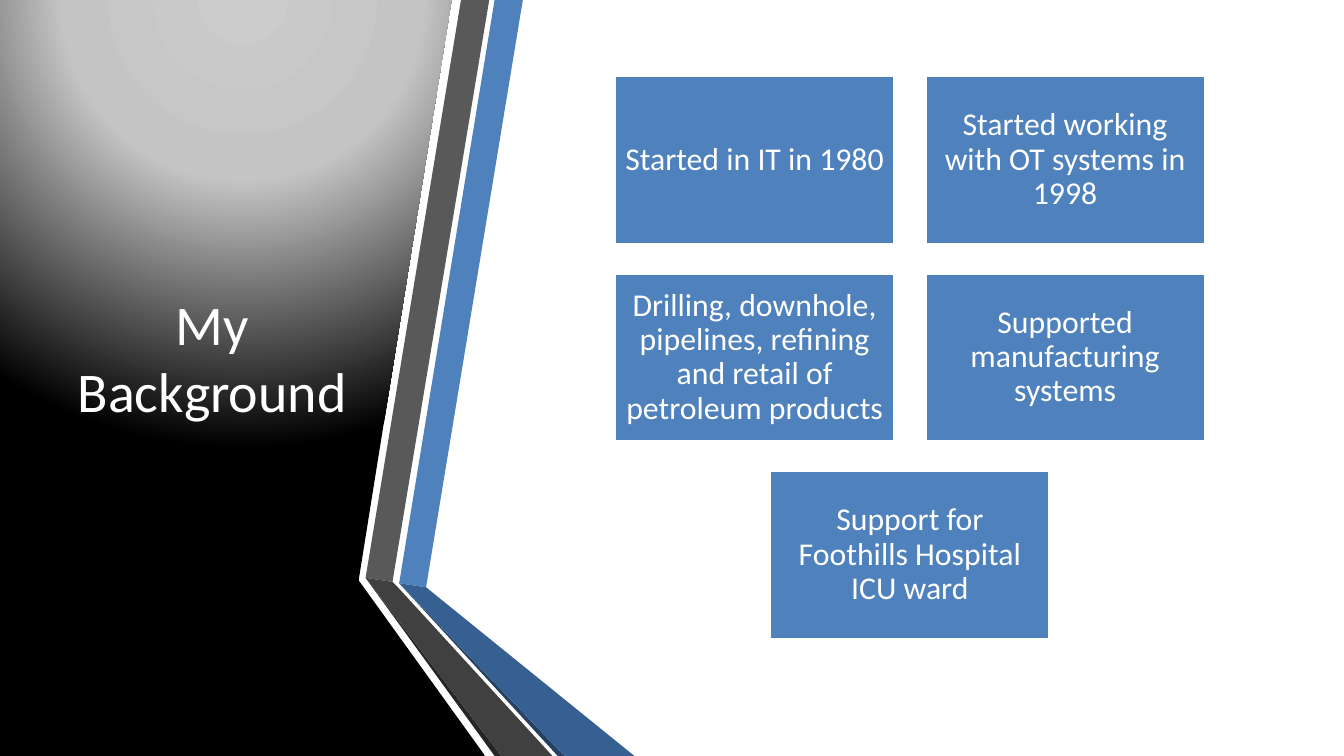
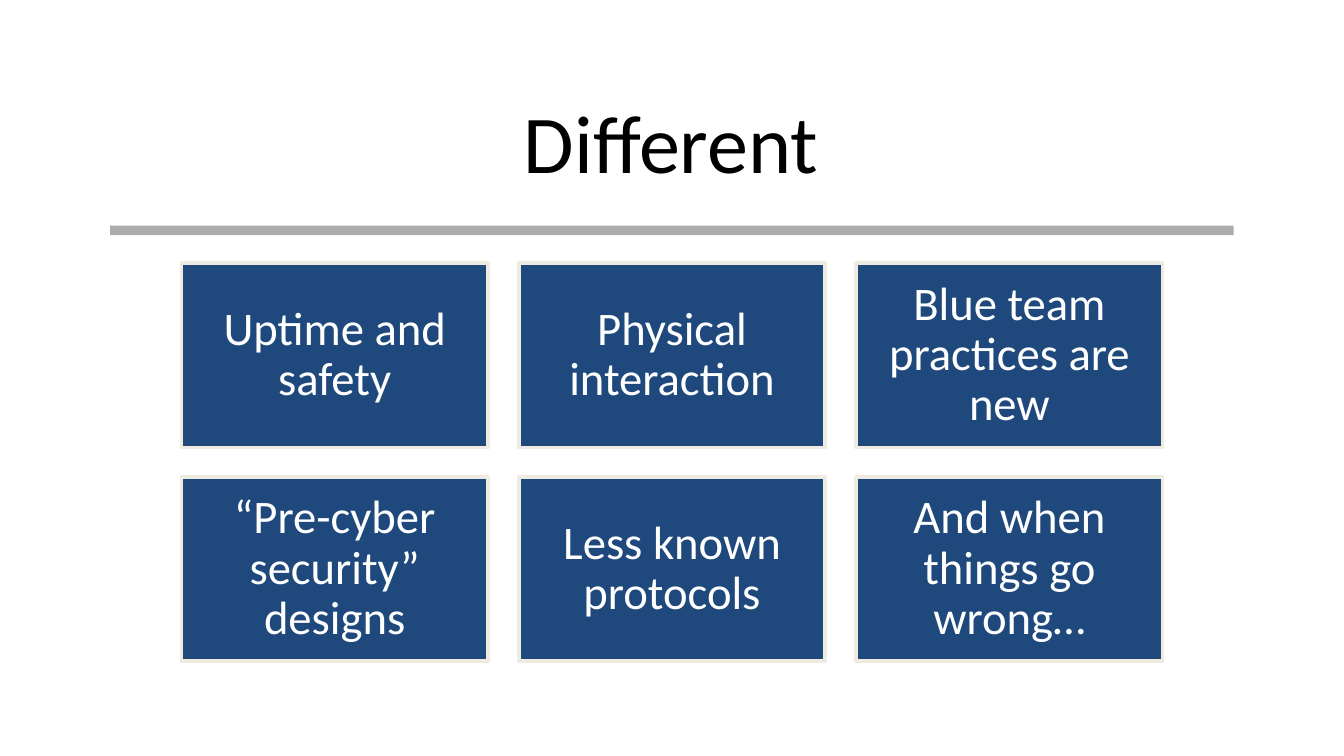
from lxml import etree
from pptx import Presentation
from pptx.dml.color import RGBColor
from pptx.enum import shapes, text
from pptx.oxml import parse_xml
from pptx.oxml.ns import nsdecls, qn
from pptx.util import Inches, Pt

WIDTH = 10
HEIGHT = WIDTH * 9 / 16
FONT = "Calibri"

WHITE = RGBColor(0xFF, 0xFF, 0xFF)
BLACK = RGBColor(0x00, 0x00, 0x00)
GRAY = RGBColor(0x80, 0x80, 0x80)
CREAM = RGBColor(0xEE, 0xEC, 0xE1)
NAVY = RGBColor(0x1F, 0x49, 0x7D)
BLUE = RGBColor(0x4F, 0x81, 0xBD)
BLUE_DARK = RGBColor(0x37, 0x60, 0x92)
BLUE_DEEP = RGBColor(0x25, 0x40, 0x61)
GRAY_MID = RGBColor(0x59, 0x59, 0x59)
GRAY_DARK = RGBColor(0x40, 0x40, 0x40)
GRAY_DEEP = RGBColor(0x26, 0x26, 0x26)

# Outline and colour of each ribbon strip, back to front
RIBBONS = [
    (BLUE, [(2.97, 4.34), (3.17, 4.37), (3.89, 0), (3.68, 0)]),
    (GRAY_MID, [(3.64, 0), (3.43, 0), (2.72, 4.3), (2.92, 4.33)]),
    (GRAY_DEEP, [(2.72, 4.3), (3.68, HEIGHT), (3.73, HEIGHT)]),
    (BLUE_DEEP, [(2.97, 4.34), (4.15, HEIGHT), (4.2, HEIGHT)]),
    (BLUE_DARK, [(2.97, 4.34), (4.2, HEIGHT), (4.72, HEIGHT), (3.17, 4.37)]),
    (GRAY_DARK, [(4.11, HEIGHT), (2.96, 4.37), (2.92, 4.33), (2.72, 4.3),
                 (3.73, HEIGHT)]),
]
PANEL = [(2.64, 0), (3.36, 0), (2.67, 4.31), (2.67, 4.32), (3.61, HEIGHT),
         (0, HEIGHT), (0, 0)]
PANEL_GRADIENT = f"""
<a:gradFill {nsdecls("a")} rotWithShape="1">
  <a:gsLst>
    <a:gs pos="0"><a:srgbClr val="CCCCCC"/></a:gs>
    <a:gs pos="40000"><a:srgbClr val="C4C4C4"/></a:gs>
    <a:gs pos="100000"><a:srgbClr val="000000"/></a:gs>
  </a:gsLst>
  <a:path path="circle">
    <a:fillToRect l="50000" t="-80000" r="50000" b="180000"/>
  </a:path>
</a:gradFill>"""

BACKGROUND = [
    ["Started in IT in 1980", "Started working with OT systems in 1998"],
    ["Drilling, downhole, pipelines, refining and retail of petroleum products",
     "Supported manufacturing systems"],
    ["Support for Foothills Hospital ICU ward"],
]
DIFFERENCES = [
    ["Uptime and safety", "Physical interaction", "Blue team practices are new"],
    ["“Pre-cyber security” designs", "Less known protocols",
     "And when things go wrong…"],
]


def add_slide(prs):
    s = prs.slides.add_slide(prs.slide_layouts[6])
    s.background.fill.solid()
    s.background.fill.fore_color.rgb = WHITE
    return s


def write(sp, words, size, color):
    """Put one centred paragraph in the middle of a shape."""
    tf = sp.text_frame
    tf.word_wrap = True
    tf.vertical_anchor = text.MSO_ANCHOR.MIDDLE
    p = tf.paragraphs[0]
    p.text = words
    p.alignment = text.PP_ALIGN.CENTER
    p.font.name = FONT
    p.font.size = Pt(size)
    p.font.color.rgb = color
    return p


def add_title(s, words, box, size, color):
    write(s.shapes.add_textbox(*map(Inches, box)), words, size, color)


def add_rect(s, box, fill):
    sp = s.shapes.add_shape(shapes.MSO_SHAPE.RECTANGLE, *map(Inches, box))
    sp.shadow.inherit = False
    sp.fill.solid()
    sp.fill.fore_color.rgb = fill
    sp.line.fill.background()
    return sp


def add_outline(s, points, fill):
    """Draw a closed polygon without a border from points in inches."""
    start, *rest = [(Inches(x), Inches(y)) for x, y in points]
    builder = s.shapes.build_freeform(*start)
    builder.add_line_segments(rest, close=True)
    sp = builder.convert_to_shape()
    sp.shadow.inherit = False
    sp.fill.solid()
    sp.fill.fore_color.rgb = fill
    sp.line.fill.background()
    return sp


def add_panel(s):
    sp = add_outline(s, PANEL, BLACK)
    solid = sp._element.spPr.find(qn("a:solidFill"))
    solid.getparent().replace(solid, parse_xml(PANEL_GRADIENT))


def add_rule(s):
    sp = add_rect(s, (0.82, 1.68, 8.36, 0.07), GRAY)
    color = sp._element.spPr.find(qn("a:solidFill"))[0]
    etree.SubElement(color, qn("a:alpha")).set("val", "65000")


def add_cards(s, rows, origin, card, gap, size, inset, fill, border):
    """Lay out rows of cards; a shorter row is centred under the first."""
    (left, top), (w, h), (gap_x, gap_y) = origin, card, gap
    for i, row in enumerate(rows):
        indent = (len(rows[0]) - len(row)) * (w + gap_x) / 2
        for j, words in enumerate(row):
            x = left + indent + j * (w + gap_x)
            sp = add_rect(s, (x, top + i * (h + gap_y), w, h), fill)
            sp.line.color.rgb = border
            sp.line.width = Pt(2)
            tf = sp.text_frame
            tf.margin_left = tf.margin_right = Inches(inset)
            tf.margin_top = tf.margin_bottom = Inches(inset)
            p = write(sp, words, size, WHITE)
            p.line_spacing = 0.9


def build_background(prs):
    s = add_slide(prs)
    add_panel(s)
    for color, points in RIBBONS:
        add_outline(s, points, color)
    add_title(s, "My Background", (0.44, 0.56, 2.28, 4.19), 30, WHITE)
    add_cards(s, BACKGROUND, origin=(4.57, 0.56), card=(2.09, 1.26),
              gap=(0.22, 0.21), size=17, inset=0.07, fill=BLUE, border=WHITE)


def build_different(prs):
    s = add_slide(prs)
    add_title(s, "Different", (0.71, 0.5, 8.57, 1.09), 44, BLACK)
    add_rule(s)
    add_cards(s, DIFFERENCES, origin=(1.35, 1.96), card=(2.28, 1.37),
              gap=(0.23, 0.22), size=25, inset=0.1, fill=NAVY, border=CREAM)


def main():
    prs = Presentation()
    prs.slide_width = Inches(WIDTH)
    prs.slide_height = Inches(HEIGHT)
    build_background(prs)
    build_different(prs)
    prs.save("out.pptx")


if __name__ == "__main__":
    main()
